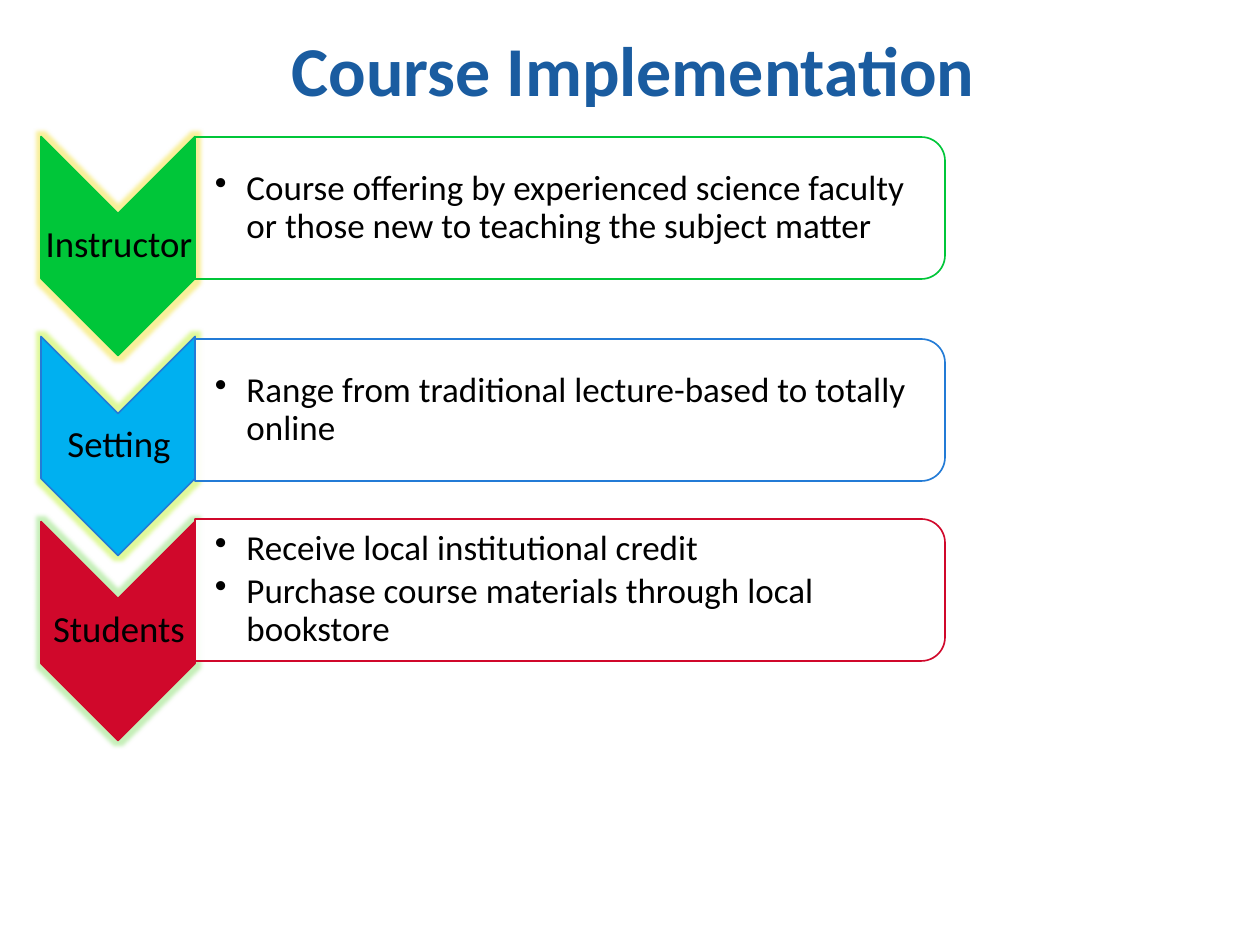
from lxml import etree
from pptx import Presentation
from pptx import util as u
from pptx.dml.color import RGBColor
from pptx.enum import shapes, text
from pptx.oxml.ns import qn

PX = u.Inches(1) / 126


def px(length):
    return u.Emu(round(length * PX))


def color(value):
    return RGBColor.from_string(value)


class CourseSlide:
    font = "Calibri"
    ink = "000000"
    line_width = u.Pt(0.94)

    def __init__(self, presentation):
        self.slide = presentation.slides.add_slide(presentation.slide_layouts[6])

    def turned_shape(self, kind, center, size, line):
        width, height = size
        shape = self.slide.shapes.add_shape(
            kind, px(center[0] - width / 2), px(center[1] - height / 2), px(width), px(height))
        shape.rotation = 90
        shape.shadow.inherit = False
        shape.line.color.rgb = color(line)
        shape.line.width = self.line_width
        return shape

    def chevron(self, center, fill, line, glow):
        shape = self.turned_shape(shapes.MSO_SHAPE.CHEVRON, center, (219, 154), line)
        shape.fill.solid()
        shape.fill.fore_color.rgb = color(fill)
        effects = shape._element.spPr.find(qn("a:effectLst"))
        halo = etree.SubElement(effects, qn("a:glow"), rad=str(u.Pt(5)))
        tint = etree.SubElement(halo, qn("a:srgbClr"), val=glow)
        etree.SubElement(tint, qn("a:alpha"), val="40000")

    def panel(self, center, line, filled):
        shape = self.turned_shape(
            shapes.MSO_SHAPE.ROUND_2_SAME_RECTANGLE, center, (142, 750), line)
        if not filled:
            shape.fill.background()
            return
        shape.fill.solid()
        shape.fill.fore_color.rgb = color("FFFFFF")
        white = shape._element.spPr.find(qn("a:solidFill"))[0]
        etree.SubElement(white, qn("a:alpha"), val="90000")

    def text_box(self, box, lines, size, ink=ink, bold=False, bullets=False,
                 insets=(1, 1), spacing=0.9, anchor=text.MSO_ANCHOR.MIDDLE):
        frame = self.slide.shapes.add_textbox(*map(px, box)).text_frame
        frame.word_wrap = True
        frame.vertical_anchor = anchor
        frame.margin_left = px(insets[0])
        frame.margin_right = frame.margin_top = frame.margin_bottom = px(insets[1])
        frame.text = "\n".join(lines)
        for paragraph in frame.paragraphs:
            paragraph.line_spacing = spacing
            if bullets:
                paragraph.space_after = u.Pt(3)
                self.bullet(paragraph)
            else:
                paragraph.alignment = text.PP_ALIGN.CENTER
            paragraph.font.name = self.font
            paragraph.font.size = u.Pt(size)
            paragraph.font.bold = bold
            paragraph.font.color.rgb = color(ink)

    def bullet(self, paragraph):
        properties = paragraph._p.get_or_add_pPr()
        properties.set("marL", str(u.Inches(0.25)))
        properties.set("indent", str(-u.Inches(0.25)))
        etree.SubElement(properties, qn("a:buChar"), char="•")

    def title(self, wording):
        self.text_box((210, 21, 840, 158), [wording], 40, "1A5CA0", bold=True,
                      insets=(12, 6), spacing=1.0, anchor=text.MSO_ANCHOR.TOP)

    def row(self, label, points, chevron_y, panel_y, fill, line, glow, filled):
        self.chevron((118, chevron_y), fill, line, glow)
        self.text_box((42, chevron_y - 33, 154, 66), [label], 21)
        self.panel((570, panel_y), line, filled)
        self.text_box((195, panel_y - 64, 742, 128), points, 20,
                      bullets=True, insets=(20, 1))


ROWS = [
    ("Instructor",
     ["Course offering by experienced science faculty or those new to teaching the subject matter"],
     246, 208, "00C639", "00C639", "F0D800", False),
    ("Setting",
     ["Range from traditional lecture-based to totally online"],
     446, 410, "00B0F0", "237BD6", "B0F000", True),
    ("Students",
     ["Receive local institutional credit",
      "Purchase course materials through local bookstore"],
     631, 590, "D0082B", "D0082B", "70D850", True),
]


def main():
    presentation = Presentation()
    presentation.slide_width = px(1260)
    presentation.slide_height = px(945)
    course = CourseSlide(presentation)
    for row in ROWS:
        course.row(*row)
    course.title("Course Implementation")
    presentation.save("out.pptx")


if __name__ == "__main__":
    main()
